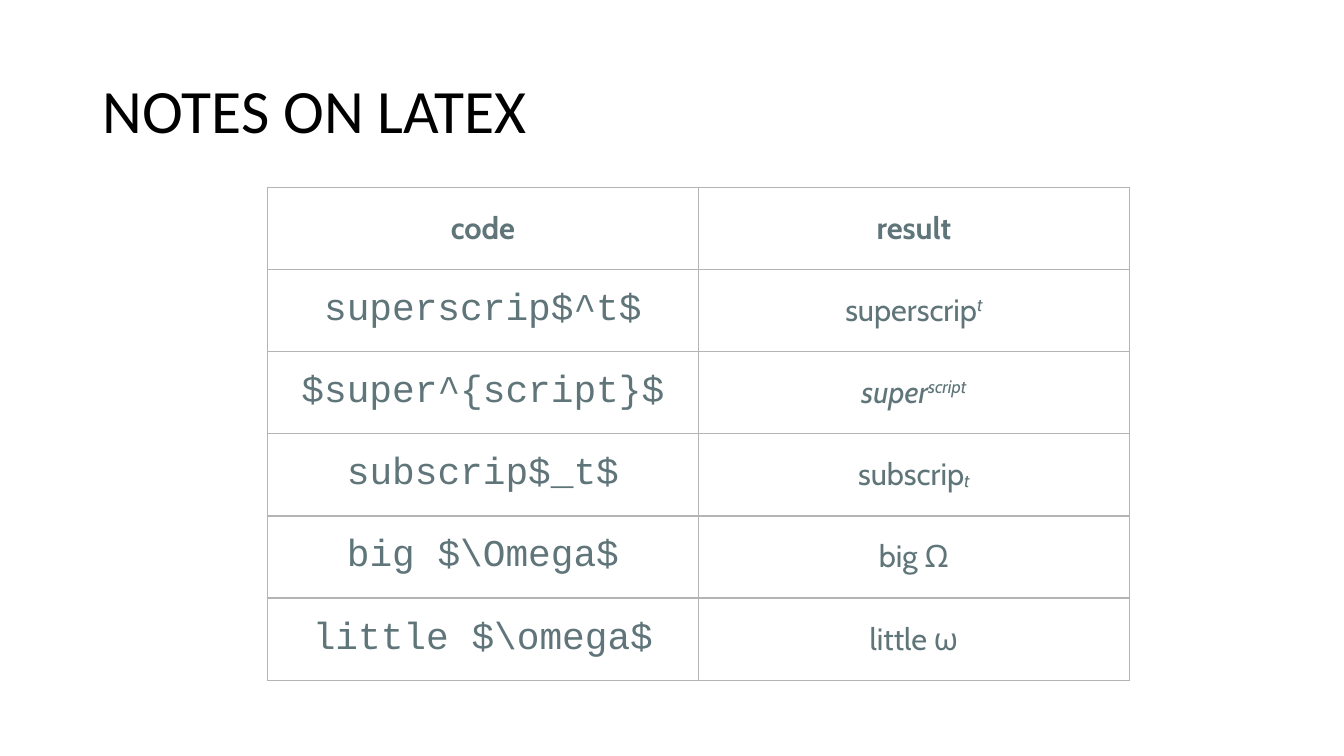
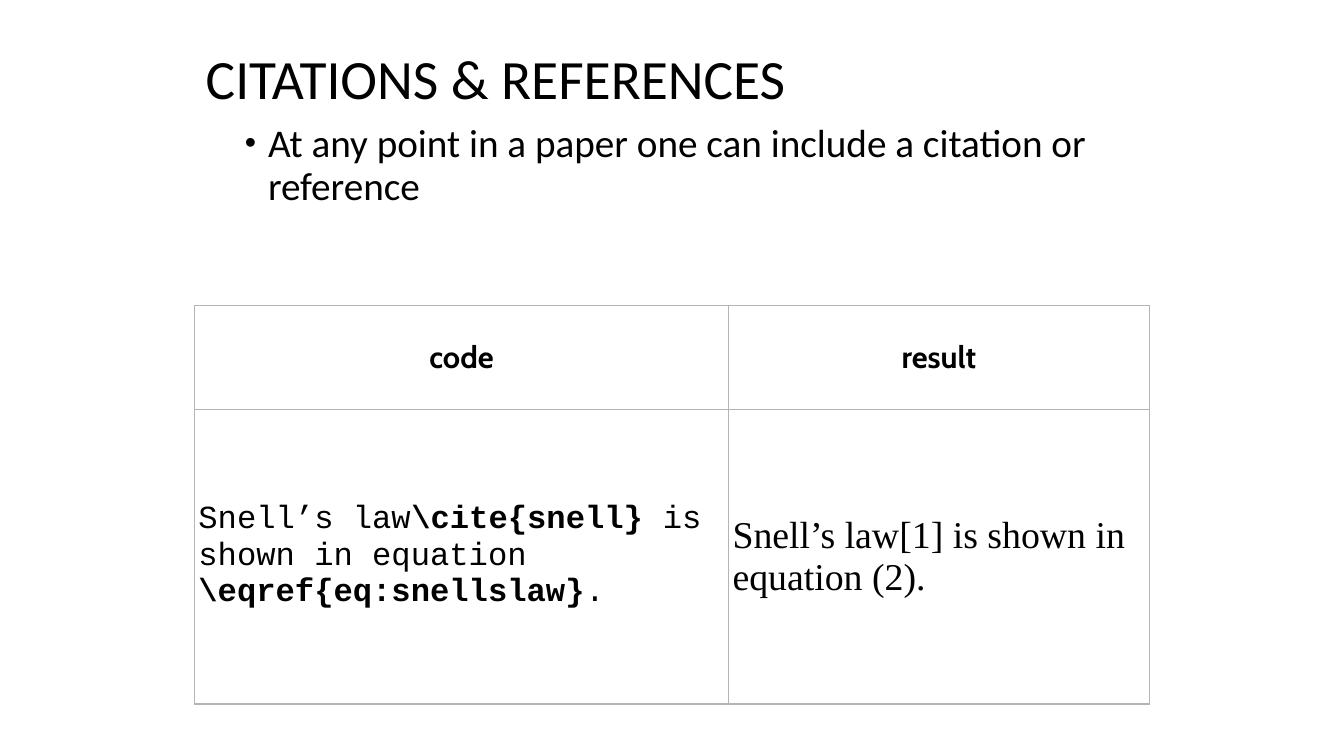
import pptx
import pptx.dml.color
import pptx.enum.text
import pptx.oxml.ns
import pptx.util
from lxml import etree
from pptx.util import Cm

COLORS = {"text": "000000", "slate": "5F7579", "border": "B4B4B4"}
BODY, HEAD, CODE, SERIF = "Calibri", "Cabin", "Courier New", "Times New Roman"
ALIGN = pptx.enum.text.PP_ALIGN
MIDDLE = pptx.enum.text.MSO_ANCHOR.MIDDLE
TOP = pptx.enum.text.MSO_ANCHOR.TOP
ITALIC = {"italic": True}
BOLD = {"bold": True}
SUPER = {"italic": True, "baseline": 32}
SUB = {"italic": True, "baseline": -6}


def add_xml(parent, tag, **attributes):
    return etree.SubElement(parent, pptx.oxml.ns.qn(tag), attributes)


class Deck:
    def __init__(self):
        self.prs = pptx.Presentation()
        self.prs.slide_width, self.prs.slide_height = Cm(33.87), Cm(19.05)

    def slide(self, layout):
        self.s = self.prs.slides.add_slide(self.prs.slide_layouts[layout])

    def style(self, p, font, size, color, align=ALIGN.LEFT, bold=False):
        p.alignment = align
        p.font.name, p.font.size, p.font.bold = font, pptx.util.Pt(size), bold
        p.font.color.rgb = pptx.dml.color.RGBColor.from_string(COLORS[color])

    def place(self, sp, box, text, anchor):
        sp.left, sp.top, sp.width, sp.height = map(Cm, box)
        tf = sp.text_frame
        tf.word_wrap = True
        tf.auto_size = pptx.enum.text.MSO_AUTO_SIZE.NONE
        tf.vertical_anchor = anchor
        p = tf.paragraphs[0]
        p.text = text
        p.line_spacing = 0.9
        p.space_before = pptx.util.Pt(0)
        return p

    def title(self, text, box, size):
        p = self.place(self.s.shapes.title, box, text, MIDDLE)
        self.style(p, BODY, size, "text")

    def bullet(self, text, box, size):
        p = self.place(self.s.placeholders[1], box, text, TOP)
        pPr = p._p.get_or_add_pPr()
        pPr.set("marL", str(Cm(0.58)))
        pPr.set("indent", str(-Cm(0.58)))
        add_xml(pPr, "a:buSzPct", val="82000")
        add_xml(pPr, "a:buFont", typeface="Arial")
        add_xml(pPr, "a:buChar", char="•")
        self.style(p, BODY, size, "text")

    def table(self, left, top, widths, heights, rows, color, code, result, align):
        frame = self.s.shapes.add_table(
            len(heights), len(widths), Cm(left), Cm(top),
            Cm(sum(widths)), Cm(sum(heights)))
        table = frame.table
        table.first_row = table.horz_banding = False
        for column, width in zip(table.columns, widths):
            column.width = Cm(width)
        for row, height in zip(table.rows, heights):
            row.height = Cm(height)
        for i, texts in enumerate([("code", "result")] + rows):
            for j, runs in enumerate(texts):
                p = self.cell(table.cell(i, j), runs)
                if i == 0:
                    self.style(p, HEAD, 22, color, ALIGN.CENTER, True)
                else:
                    self.style(p, *(code, result)[j], color, align)

    def cell(self, cell, runs):
        cell.margin_left = cell.margin_right = Cm(0.1)
        cell.margin_top = cell.margin_bottom = Cm(0.1)
        cell.vertical_anchor = MIDDLE
        tcPr = cell._tc.get_or_add_tcPr()
        for side in "LRTB":
            line = add_xml(tcPr, "a:ln" + side, w=str(pptx.util.Pt(1)))
            fill = add_xml(line, "a:solidFill")
            add_xml(fill, "a:srgbClr", val=COLORS["border"])
        cell.fill.background()
        p = cell.text_frame.paragraphs[0]
        for text, look in [(runs, {})] if isinstance(runs, str) else runs:
            r = p.add_run()
            r.text = text
            r.font.bold = look.get("bold")
            r.font.italic = look.get("italic")
            if "baseline" in look:
                r._r.get_or_add_rPr().set("baseline", str(look["baseline"] * 1000))
        return p


def main():
    deck = Deck()

    deck.slide(5)
    deck.title("NOTES ON LATEX", (2.34, 1.02, 29.21, 3.68), 44)
    rows = [
        ("superscrip$^t$", [("superscrip", {}), ("t", SUPER)]),
        ("$super^{script}$", [("super", ITALIC), ("script", SUPER)]),
        ("subscrip$_t$", [("subscrip", {}), ("t", SUB)]),
        (r"big $\Omega$", "big Ω"),
        (r"little $\omega$", "little ω"),
    ]
    deck.table(6.74, 4.72, [10.86] * 2, [2.07] * 6, rows, "slate",
               (CODE, 27), (HEAD, 22), ALIGN.CENTER)

    deck.slide(1)
    deck.title("CITATIONS & REFERENCES", (4.93, 0.51, 24, 3.07), 39.6)
    deck.bullet("At any point in a paper one can include a citation or reference",
                (5.92, 3, 22, 5.28), 28)
    code = [("Snell’s law", {}), (r"\cite{snell}", BOLD),
            (" is shown in equation ", {}), (r"\eqref{eq:snellslaw}", BOLD), (".", {})]
    rows = [(code, "Snell’s law[1] is shown in equation (2).")]
    deck.table(4.9, 7.7, [13.46, 10.6], [2.62, 7.42], rows, "text",
               (CODE, 23), (SERIF, 27), ALIGN.LEFT)

    deck.prs.save("out.pptx")


if __name__ == "__main__":
    main()
